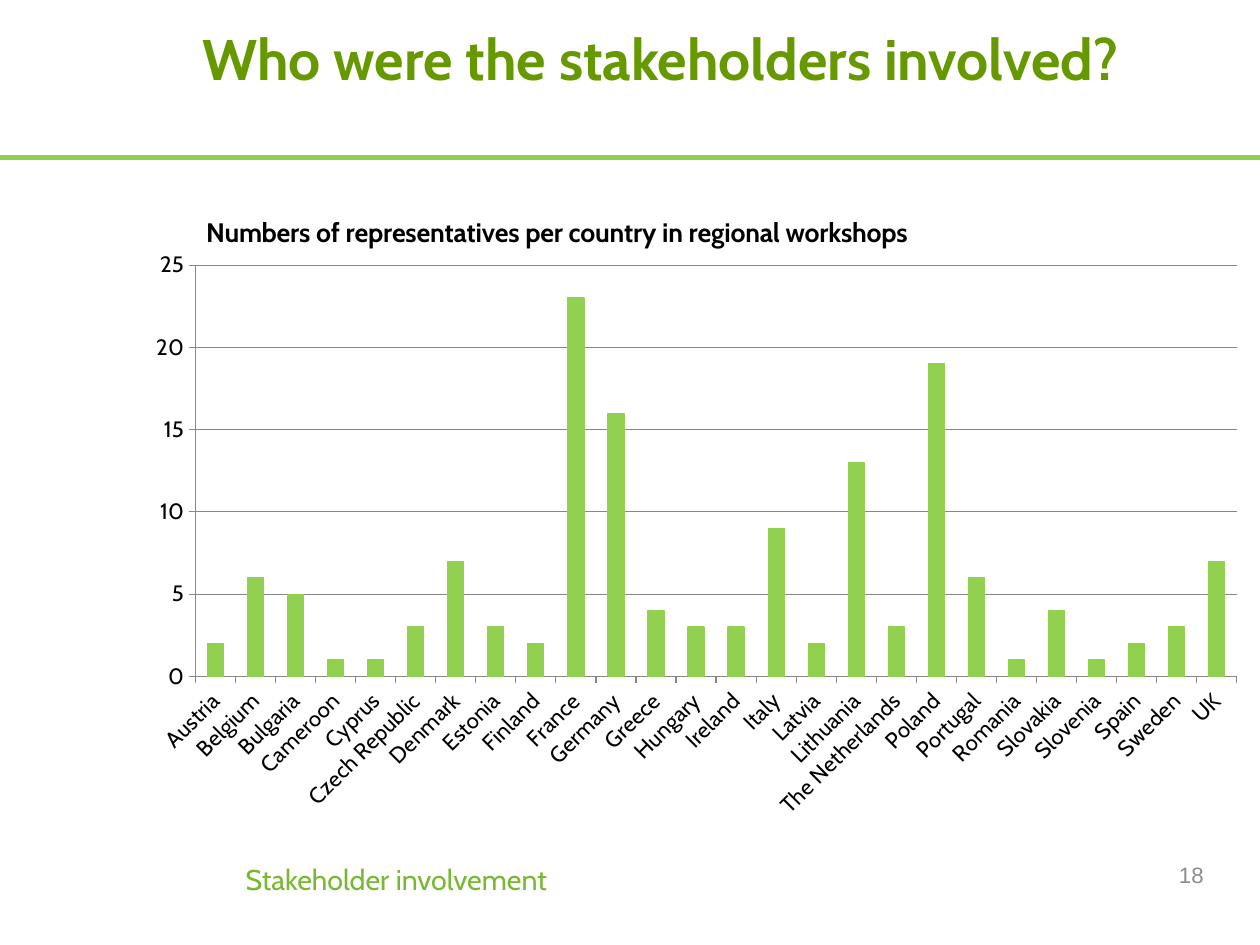
from dataclasses import dataclass

from lxml.etree import SubElement
from pptx import Presentation
from pptx.chart.data import CategoryChartData
from pptx.dml.color import RGBColor
from pptx.enum.chart import XL_CHART_TYPE, XL_TICK_MARK
from pptx.enum.shapes import MSO_CONNECTOR
from pptx.enum.text import MSO_ANCHOR, MSO_AUTO_SIZE, PP_ALIGN
from pptx.oxml import parse_xml
from pptx.oxml.ns import nsdecls, qn
from pptx.util import Inches, Pt


@dataclass(frozen=True)
class Theme:
    bar: RGBColor = RGBColor(0x92, 0xD0, 0x50)
    title: RGBColor = RGBColor(0x66, 0x99, 0x00)
    footer: RGBColor = RGBColor(0x78, 0xB8, 0x32)
    number: RGBColor = RGBColor(0x8C, 0x8C, 0x8C)
    axis: RGBColor = RGBColor(0x87, 0x87, 0x87)
    text: RGBColor = RGBColor(0, 0, 0)
    font: str = "Cabin"
    number_font: str = "Arial"
    title_size: float = 36
    footer_size: float = 18
    chart_title_size: float = 16.8
    label_size: float = 14


THEME = Theme()
PAGE_WIDTH = 28 / 2.54
PAGE_HEIGHT = 21 / 2.54

REPRESENTATIVES = {
    "Austria": 2, "Belgium": 6, "Bulgaria": 5, "Cameroon": 1, "Cyprus": 1,
    "Czech Republic": 3, "Denmark": 7, "Estonia": 3, "Finland": 2,
    "France": 23, "Germany": 16, "Greece": 4, "Hungary": 3, "Ireland": 3,
    "Italy": 9, "Latvia": 2, "Lithuania": 13, "The Netherlands": 3,
    "Poland": 19, "Portugal": 6, "Romania": 1, "Slovakia": 4,
    "Slovenia": 1, "Spain": 2, "Sweden": 3, "UK": 7,
}


def set_values(target, values):
    for name, value in values.items():
        setattr(target, name, value)


def style_font(font, size, color, name=THEME.font, bold=False):
    set_values(font, {"size": Pt(size), "name": name, "bold": bold})
    font.color.rgb = color


def style_line(line, color, width):
    line.color.rgb = color
    line.width = Pt(width)


def add_text(page, place, text, font, frame=None, para_format=None):
    box = page.shapes.add_textbox(*map(Inches, place))
    set_values(box.text_frame, {"word_wrap": True, **(frame or {})})
    para = box.text_frame.paragraphs[0]
    set_values(para, para_format or {})
    span = para.add_run()
    span.text = text
    style_font(span.font, **font)


def add_rule(page, top):
    rule = page.shapes.add_connector(
        MSO_CONNECTOR.STRAIGHT, 0, Inches(top), Inches(PAGE_WIDTH), Inches(top))
    style_line(rule.line, THEME.bar, 3)
    SubElement(rule._element.spPr, qn("a:effectLst"))


def place_part(part, index, place, chart_size, inner=False):
    for old in part.findall(qn("c:layout")):
        part.remove(old)
    layout = parse_xml(f"<c:layout {nsdecls('c')}><c:manualLayout/></c:layout>")
    settings = {"layoutTarget": "inner"} if inner else {}
    settings.update({"xMode": "edge", "yMode": "edge"})
    for name, length, whole in zip("xywh", place, chart_size * 2):
        settings[name] = length / whole
    for name, value in settings.items():
        SubElement(layout[0], qn(f"c:{name}")).set("val", str(value))
    part.insert(index, layout)


def style_axis(axis):
    set_values(axis, {
        "major_tick_mark": XL_TICK_MARK.OUTSIDE,
        "minor_tick_mark": XL_TICK_MARK.NONE,
    })
    style_line(axis.format.line, THEME.axis, 0.75)
    style_font(axis.tick_labels.font, THEME.label_size, THEME.text)


def add_country_chart(page, place, title):
    data = CategoryChartData()
    data.categories = list(REPRESENTATIVES)
    data.add_series("Series 1", list(REPRESENTATIVES.values()))
    chart = page.shapes.add_chart(
        XL_CHART_TYPE.COLUMN_CLUSTERED, *map(Inches, place), data).chart
    set_values(chart, {"has_legend": False, "has_title": True})
    style_font(chart.font, THEME.label_size, THEME.text)

    span = chart.chart_title.text_frame.paragraphs[0].add_run()
    span.text = title
    style_font(span.font, THEME.chart_title_size, THEME.text, bold=True)
    size = place[2:]
    place_part(chart.chart_title._element, 1, (0.59, 0.3), size)
    place_part(chart._chartSpace.chart.plotArea, 0,
               (0.54, 0.79, 9.11, 3.6), size, inner=True)

    for axis in (chart.category_axis, chart.value_axis):
        style_axis(axis)
    labels = chart.category_axis._element.find(qn("c:txPr"))
    labels.find(qn("a:bodyPr")).set("rot", "-2700000")
    set_values(chart.value_axis, {
        "minimum_scale": 0, "maximum_scale": 25, "major_unit": 5,
        "has_major_gridlines": True,
    })
    style_line(chart.value_axis.major_gridlines.format.line, THEME.axis, 0.75)

    plot = chart.plots[0]
    set_values(plot, {"gap_width": 150, "vary_by_categories": False})
    bars = plot.series[0].format
    bars.fill.solid()
    bars.fill.fore_color.rgb = THEME.bar
    style_line(bars.line, THEME.bar, 0.75)


def main():
    deck = Presentation()
    deck.slide_width = Inches(PAGE_WIDTH)
    deck.slide_height = Inches(PAGE_HEIGHT)
    page = deck.slides.add_slide(deck.slide_layouts[6])

    add_rule(page, 1.38)
    add_text(page, (8.06, 7.43, 2.57, 0.44), "18",
             {"size": THEME.label_size, "color": THEME.number,
              "name": THEME.number_font},
             {"vertical_anchor": MSO_ANCHOR.MIDDLE},
             {"alignment": PP_ALIGN.RIGHT})
    add_country_chart(page, (1.17, 1.53, 9.84, 5.75),
                      "Numbers of representatives per country in regional workshops")
    add_text(page, (1.77, 0.2, 8.7, 1.38), "Who were the stakeholders involved?",
             {"size": THEME.title_size, "color": THEME.title, "bold": True},
             {f"margin_{side}": 0 for side in ("left", "top", "right", "bottom")},
             {"line_spacing": 1.01})
    add_text(page, (2.05, 7.52, 2.94, 0.38), "Stakeholder involvement",
             {"size": THEME.footer_size, "color": THEME.footer},
             {"word_wrap": False, "auto_size": MSO_AUTO_SIZE.SHAPE_TO_FIT_TEXT},
             {"line_spacing": 0.93})

    deck.save("out.pptx")


if __name__ == "__main__":
    main()
